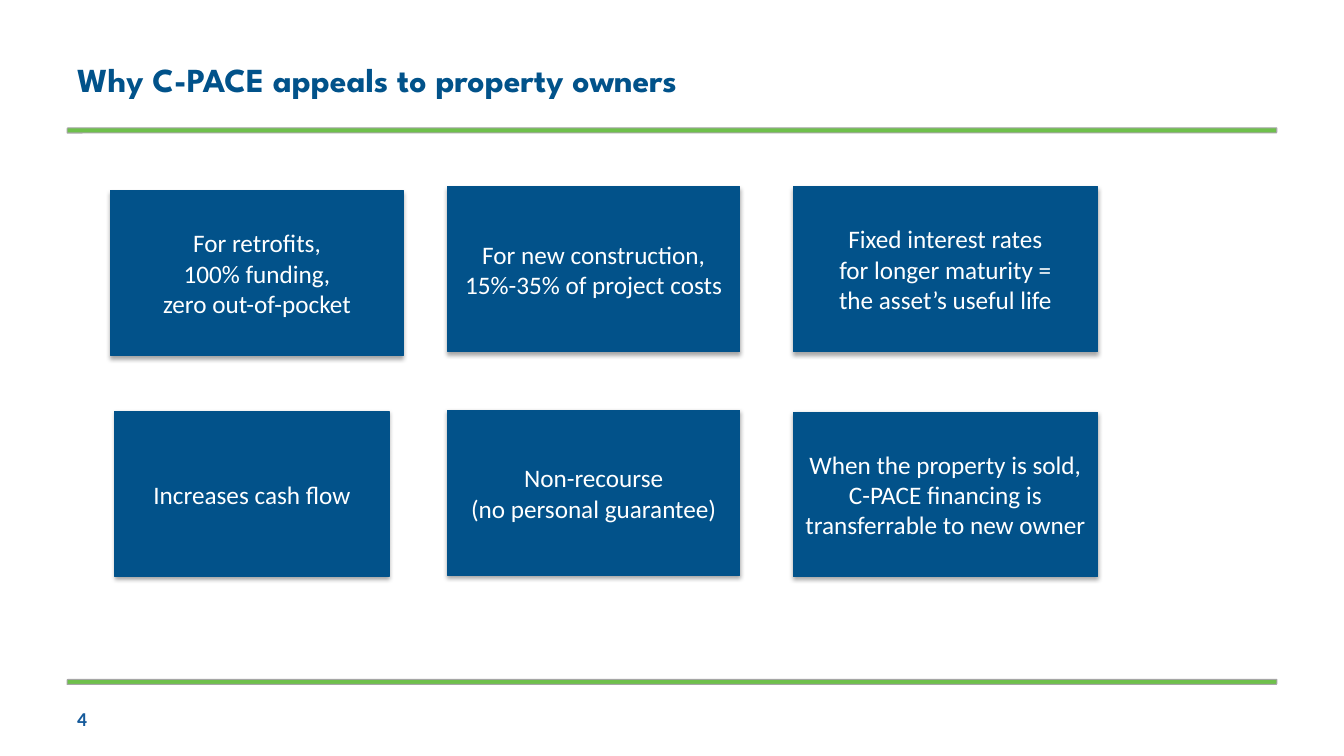
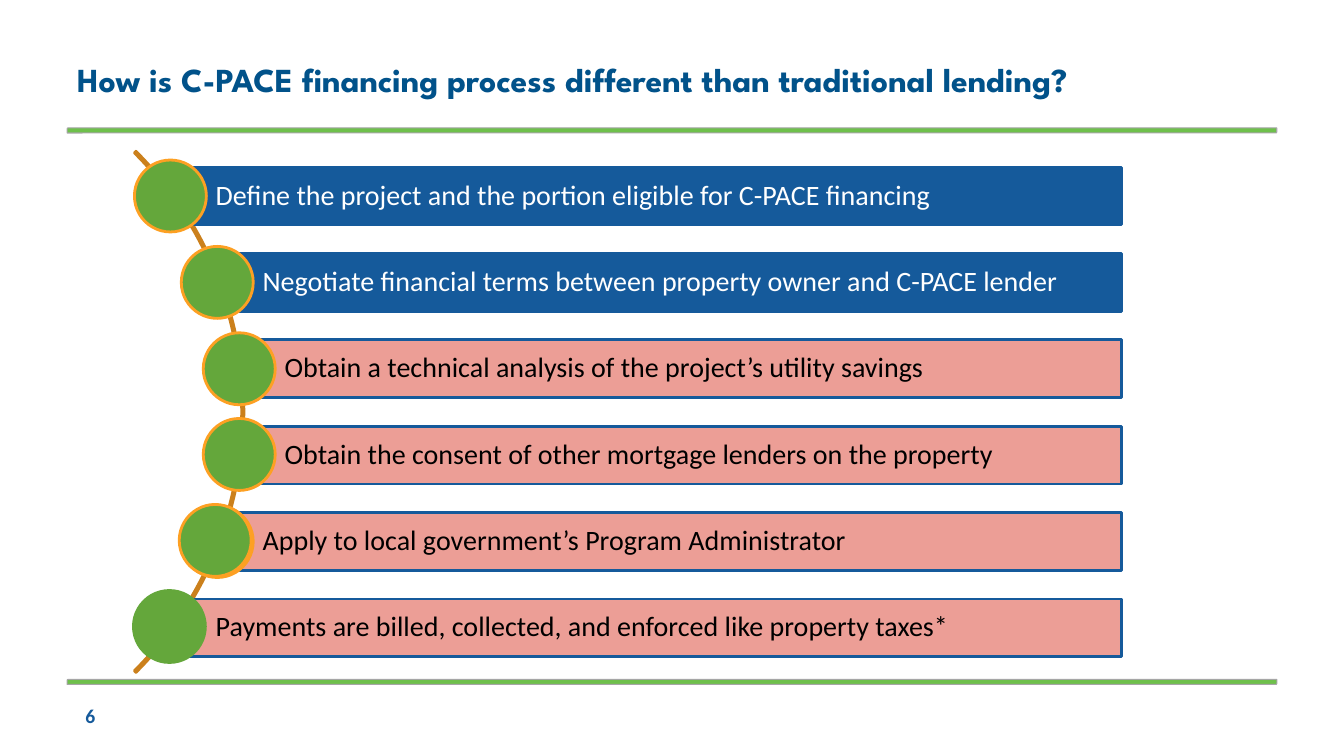
from lxml import etree
from pptx import Presentation
from pptx.dml.color import RGBColor
from pptx.enum import shapes, text
from pptx.oxml.ns import qn
from pptx.util import Pt

KIND = shapes.MSO_SHAPE
ALIGN = text.PP_ALIGN
NAVY = RGBColor(0x01, 0x52, 0x8A)
CARD = RGBColor(0x02, 0x52, 0x8A)
BLUE = RGBColor(0x15, 0x5A, 0x9B)
LIME = RGBColor(0x6E, 0xC0, 0x4B)
GREEN = RGBColor(0x64, 0xA7, 0x3B)
ORANGE = RGBColor(0xFD, 0xA0, 0x23)
BROWN = RGBColor(0xCB, 0x80, 0x1C)
PINK = RGBColor(0xEC, 0x9E, 0x96)
GREY = RGBColor(0xA6, 0xA6, 0xA6)
WHITE = RGBColor(0xFF, 0xFF, 0xFF)
BLACK = RGBColor(0, 0, 0)
BODY, HEAD = "Calibri", "League Spartan"

# Card: left, top, width, height, lines
CARDS = [
    (79.2, 136.1, 208.8, 118.1,
     ["For retrofits,", "100% funding,", "zero out-of-pocket"]),
    (319.7, 133.2, 208.8, 118.1,
     ["For new construction,", "15%-35% of project costs"]),
    (566.6, 133.2, 217.4, 118.1,
     ["Fixed interest rates", "for longer maturity =", "the asset’s useful life"]),
    (82.1, 293.8, 195.8, 118.1, ["Increases cash flow"]),
    (319.7, 293, 208.8, 118.1, ["Non-recourse", "(no personal guarantee)"]),
    (566.6, 294.5, 217.4, 117.4,
     ["When the property is sold, C-PACE financing is transferrable to new owner"]),
]

# Step: text, bar left, bar fill, text colour, dots (x shift, y shift, fill, line)
DOT = (0, 0, GREEN, ORANGE)
STEPS = [
    ("Define the project and the portion eligible for C-PACE financing",
     121.7, BLUE, WHITE, [DOT]),
    ("Negotiate financial terms between property owner and C-PACE lender",
     155.2, BLUE, WHITE, [DOT]),
    ("Obtain a technical analysis of the project’s utility savings",
     170.9, PINK, BLACK, [DOT]),
    ("Obtain the consent of other mortgage lenders on the property",
     170.9, PINK, BLACK, [(0, -0.5, GREEN, ORANGE)]),
    ("Apply to local government’s Program Administrator",
     155.2, PINK, BLACK, [(0, 0, WHITE, ORANGE), (-1.5, -0.8, GREEN, ORANGE)]),
    ("Payments are billed, collected, and enforced like property taxes*",
     121.7, PINK, BLACK, [(-0.7, -1, GREEN, GREEN)]),
]
TOP, STEP, TALL, RIGHT, DIAM = 119.4, 61.7, 41.2, 801.2, 51.4


def draw(slide, kind, box, fill, line, width):
    shape = slide.shapes.add_shape(kind, *map(Pt, box))
    shape.shadow.inherit = False
    if fill is None:
        shape.fill.background()
    else:
        shape.fill.solid()
        shape.fill.fore_color.rgb = fill
    shape.line.color.rgb = line
    shape.line.width = Pt(width)
    return shape


def write(shape, lines, size, color, font=BODY, bold=False, align=ALIGN.LEFT):
    frame = shape.text_frame
    frame.word_wrap = True
    frame.vertical_anchor = text.MSO_ANCHOR.MIDDLE
    for i, line in enumerate(lines):
        para = frame.add_paragraph() if i else frame.paragraphs[0]
        para.alignment = align
        run = para.add_run()
        run.text = line
        run.font.size = Pt(size)
        run.font.name = font
        run.font.bold = bold
        run.font.color.rgb = color
    return frame


def shade(shape):
    """Give the shape a soft shadow that falls straight down."""
    effects = shape._element.spPr.find(qn("a:effectLst"))
    outer = etree.SubElement(
        effects, qn("a:outerShdw"), blurRad=str(Pt(3.1)), dist=str(Pt(1.8)),
        dir="5400000", rotWithShape="0")
    color = etree.SubElement(outer, qn("a:srgbClr"), val="000000")
    etree.SubElement(color, qn("a:alpha"), val="35000")


def start(deck, title, number, left, top):
    """Add a slide with its title, two rules and page number."""
    slide = deck.slides.add_slide(deck.slide_layouts[6])
    for y, turn in ((91.4, 0), (485.3, 180)):
        rule = draw(slide, KIND.ROUND_2_DIAG_RECTANGLE, (48, y, 864, 3.6),
                    LIME, GREY, 0.75)
        rule.rotation = turn
    head = slide.shapes.add_textbox(Pt(48), Pt(21.6), Pt(864), Pt(69.8))
    write(head, [title], 24, NAVY, HEAD, True)
    foot = slide.shapes.add_textbox(Pt(left), Pt(top), Pt(224), Pt(28.8))
    write(foot, [number], 14, BLUE, bold=True)
    return slide


def appeal(deck):
    slide = start(deck, "Why C-PACE appeals to property owners", "4", 48, 499)
    for *box, lines in CARDS:
        card = draw(slide, KIND.RECTANGLE, box, CARD, CARD, 0.75)
        shade(card)
        write(card, lines, 18, WHITE, align=ALIGN.CENTER)


def process(deck):
    slide = start(
        deck, "How is C-PACE financing process different than traditional lending?",
        "6", 54, 496.8)
    arc = draw(slide, KIND.BLOCK_ARC, (-352.1, 31, 526.3, 526.3), None, BROWN, 2)
    for i, value in enumerate((189, 27, 0.003)):
        arc.adjustments[i] = value

    for i, (label, left, fill, color, dots) in enumerate(STEPS):
        top = TOP + i * STEP
        bar = draw(slide, KIND.RECTANGLE, (left, top, RIGHT - left, TALL),
                   fill, BLUE, 2)
        frame = write(bar, [label], 20, color)
        frame.margin_left = Pt(32.4)
        frame.margin_right = frame.margin_top = frame.margin_bottom = Pt(4.3)
        frame.paragraphs[0].line_spacing = 0.9
        for dx, dy, paint, line in dots:
            box = (left - DIAM / 2 + dx, top + (TALL - DIAM) / 2 + dy, DIAM, DIAM)
            draw(slide, KIND.OVAL, box, paint, line, 2)


def main():
    deck = Presentation()
    deck.slide_width, deck.slide_height = Pt(960), Pt(540)
    appeal(deck)
    process(deck)
    deck.save("out.pptx")


if __name__ == "__main__":
    main()
